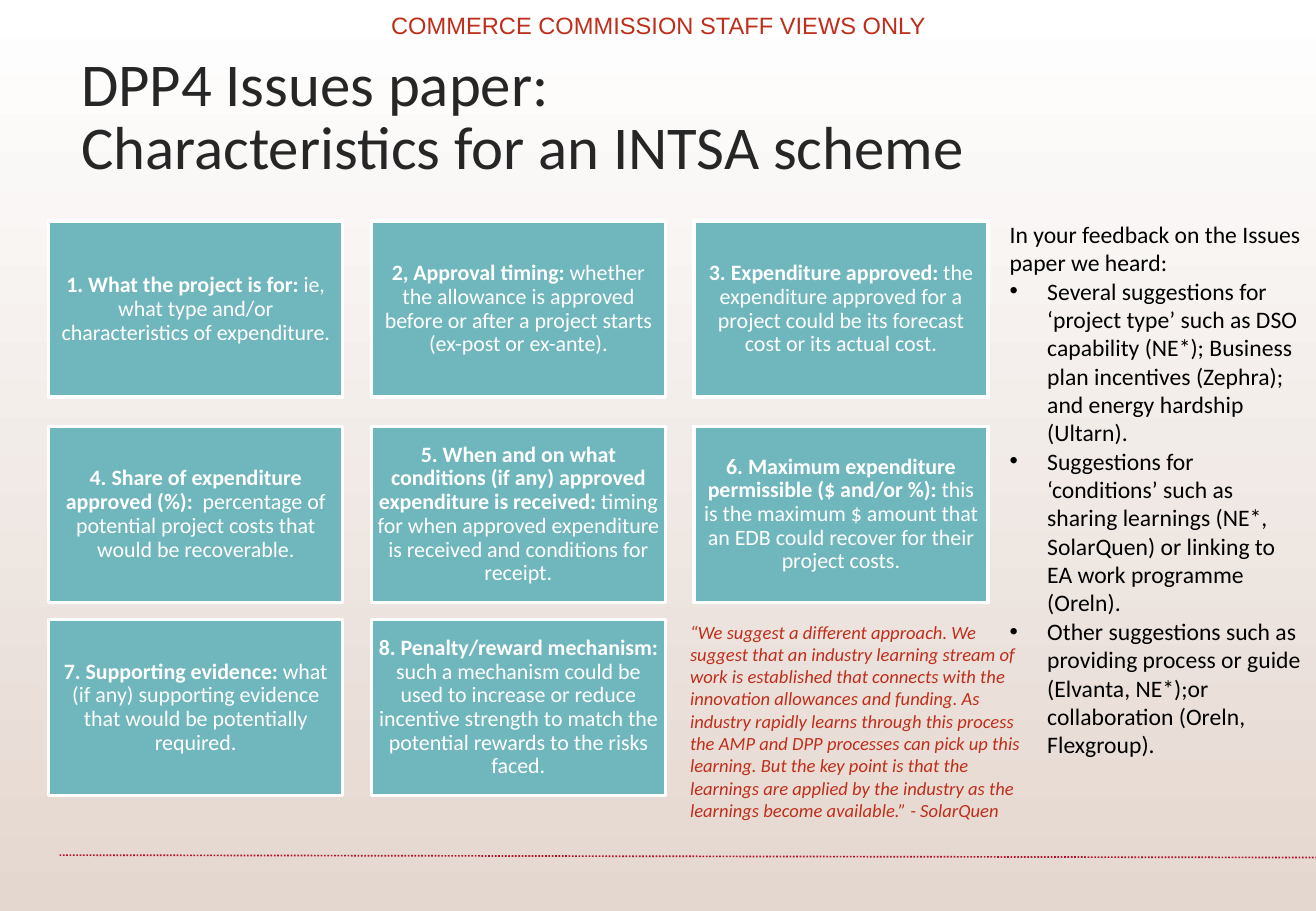
from lxml import etree
from pptx import Presentation
from pptx.dml.color import RGBColor
from pptx.enum.dml import MSO_LINE
from pptx.enum.shapes import MSO_CONNECTOR, MSO_SHAPE
from pptx.enum.text import MSO_ANCHOR, PP_ALIGN
from pptx.oxml.ns import qn
from pptx.util import Pt

PX = 9144
LEFT, CENTER = PP_ALIGN.LEFT, PP_ALIGN.CENTER
MIDDLE = MSO_ANCHOR.MIDDLE
RECTANGLE = MSO_SHAPE.RECTANGLE
STRAIGHT = MSO_CONNECTOR.STRAIGHT
DOTTED = MSO_LINE.ROUND_DOT
TEAL, WHITE, RED, BLACK = "70B6BD", "FFFFFF", "BF2E1A", "000000"

CHARACTERISTICS = [
    ("1. What the project is for: ",
     "ie, what type and/or characteristics of expenditure."),
    ("2, Approval timing: ",
     "whether the allowance is approved before or after a project starts (ex-post or ex-ante)."),
    ("3. Expenditure approved: ",
     "the expenditure approved for a project could be its forecast cost or its actual cost."),
    ("4. Share of expenditure approved (%): ",
     " percentage of potential project costs that would be recoverable."),
    ("5. When and on what conditions (if any) approved expenditure is received: ",
     "timing for when approved expenditure is received and conditions for receipt."),
    ("6. Maximum expenditure permissible ($ and/or %): ",
     "this is the maximum $ amount that an EDB could recover for their project costs."),
    ("7. Supporting evidence: ",
     "what (if any) supporting evidence that would be potentially required."),
    ("8. Penalty/reward mechanism: ",
     "such a mechanism could be used to increase or reduce incentive strength "
     "to match the potential rewards to the risks faced."),
]
QUOTE = (
    "“We suggest a different approach. We suggest that an industry learning stream of work is "
    "established that connects with the innovation allowances and funding. As industry rapidly "
    "learns through this process the AMP and DPP processes can pick up this learning. But the key "
    "point is that the learnings are applied by the industry as the learnings become available.” "
    "- SolarQuen"
)
FEEDBACK = [
    "Several suggestions for ‘project type’ such as DSO capability (NE*); Business plan "
    "incentives (Zephra); and energy hardship (Ultarn).",
    "Suggestions for ‘conditions’ such as sharing learnings (NE*, SolarQuen) or linking to EA "
    "work programme (Oreln).",
    "Other suggestions such as providing process or guide (Elvanta, NE*);or collaboration "
    "(Oreln, Flexgroup).",
]


def px(length):
    """Turn a length in px into EMU."""
    return int(length * PX)


def rgb(value):
    """Turn a hex string into a colour."""
    return RGBColor.from_string(value)


def add_run(paragraph, text, size, color, font="Calibri", bold=False, italic=False):
    """Append one formatted run to a paragraph."""
    run = paragraph.add_run()
    run.text = text
    run.font.name = font
    run.font.size = Pt(size)
    run.font.bold = bold
    run.font.italic = italic
    run.font.color.rgb = rgb(color)


def add_text_frame(slide, box):
    """Add a wrapping text box and return its frame."""
    frame = slide.shapes.add_textbox(*map(px, box)).text_frame
    frame.word_wrap = True
    return frame


def add_label(slide, box, text, size, color, align=LEFT, **style):
    """Add a text box holding one paragraph."""
    paragraph = add_text_frame(slide, box).paragraphs[0]
    paragraph.alignment = align
    add_run(paragraph, text, size, color, **style)


def add_title(slide, box):
    """Add the two-line title."""
    frame = add_text_frame(slide, box)
    first, second = frame.paragraphs[0], frame.add_paragraph()
    second.space_before = Pt(7)
    lines = ("DPP4 Issues paper:", "Characteristics for an INTSA scheme")
    for paragraph, line in zip((first, second), lines):
        paragraph.line_spacing = 0.7
        add_run(paragraph, line, 36, "262626")


def add_card(slide, box, heading, detail):
    """Add one characteristic as a filled rectangle."""
    shape = slide.shapes.add_shape(RECTANGLE, *map(px, box))
    shape.shadow.inherit = False
    shape.fill.solid()
    shape.fill.fore_color.rgb = rgb(TEAL)
    shape.line.color.rgb = rgb(WHITE)
    shape.line.width = Pt(2)
    frame = shape.text_frame
    frame.word_wrap = True
    frame.vertical_anchor = MIDDLE
    frame.margin_left = frame.margin_right = px(5)
    frame.margin_top = frame.margin_bottom = px(5)
    paragraph = frame.paragraphs[0]
    paragraph.alignment = CENTER
    paragraph.line_spacing = 0.9
    add_run(paragraph, heading, 13, WHITE, bold=True)
    add_run(paragraph, detail, 13, WHITE)


def add_card_grid(slide, box):
    """Lay the characteristics out in rows of three."""
    left, top, width, height = box
    card_width, card_height = 242, 145
    column_step = (width - card_width) / 2
    row_offsets = (0, 169, height - card_height)
    for index, (heading, detail) in enumerate(CHARACTERISTICS):
        row, column = divmod(index, 3)
        card = (left + column * column_step, top + row_offsets[row], card_width, card_height)
        add_card(slide, card, heading, detail)


def add_feedback(slide, box):
    """Add the feedback column with its bullets."""
    frame = add_text_frame(slide, box)
    add_run(frame.paragraphs[0], "In your feedback on the Issues paper we heard:", 14, BLACK)
    for item in FEEDBACK:
        paragraph = frame.add_paragraph()
        properties = paragraph._p.get_or_add_pPr()
        properties.set("marL", str(px(31)))
        properties.set("indent", str(px(-31)))
        etree.SubElement(properties, qn("a:buFont"), typeface="Arial")
        etree.SubElement(properties, qn("a:buChar"), char="•")
        add_run(paragraph, item, 14, BLACK)


def add_footer_rule(slide, start, end):
    """Add the dotted rule near the foot of the slide."""
    rule = slide.shapes.add_connector(STRAIGHT, *map(px, start + end))
    rule.line.color.rgb = rgb("BA0F2C")
    rule.line.width = Pt(1)
    rule.line.dash_style = DOTTED
    etree.SubElement(rule._element.spPr, qn("a:effectLst"))


def set_background(slide):
    """Fill the background with a vertical gradient."""
    fill = slide.background.fill
    fill.gradient()
    fill.gradient_angle = 270
    for stop, color in zip(fill.gradient_stops, (WHITE, "E4D7CF")):
        stop.color.rgb = rgb(color)


def main():
    """Build and save the slide."""
    presentation = Presentation()
    presentation.slide_width = px(1083)
    presentation.slide_height = px(750)
    slide = presentation.slides.add_slide(presentation.slide_layouts[6])
    set_background(slide)
    add_footer_rule(slide, (49, 704), (1083, 706))
    add_title(slide, (57, 49, 780, 116))
    add_card_grid(slide, (40, 182, 773, 473))
    add_label(slide, (558, 506, 305, 177), QUOTE, 11, RED, italic=True)
    add_label(slide, (231, 4, 622, 34), "COMMERCE COMMISSION STAFF VIEWS ONLY", 14, RED,
              CENTER, font="Arial")
    add_feedback(slide, (821, 176, 262, 434))
    presentation.save("out.pptx")


if __name__ == "__main__":
    main()
